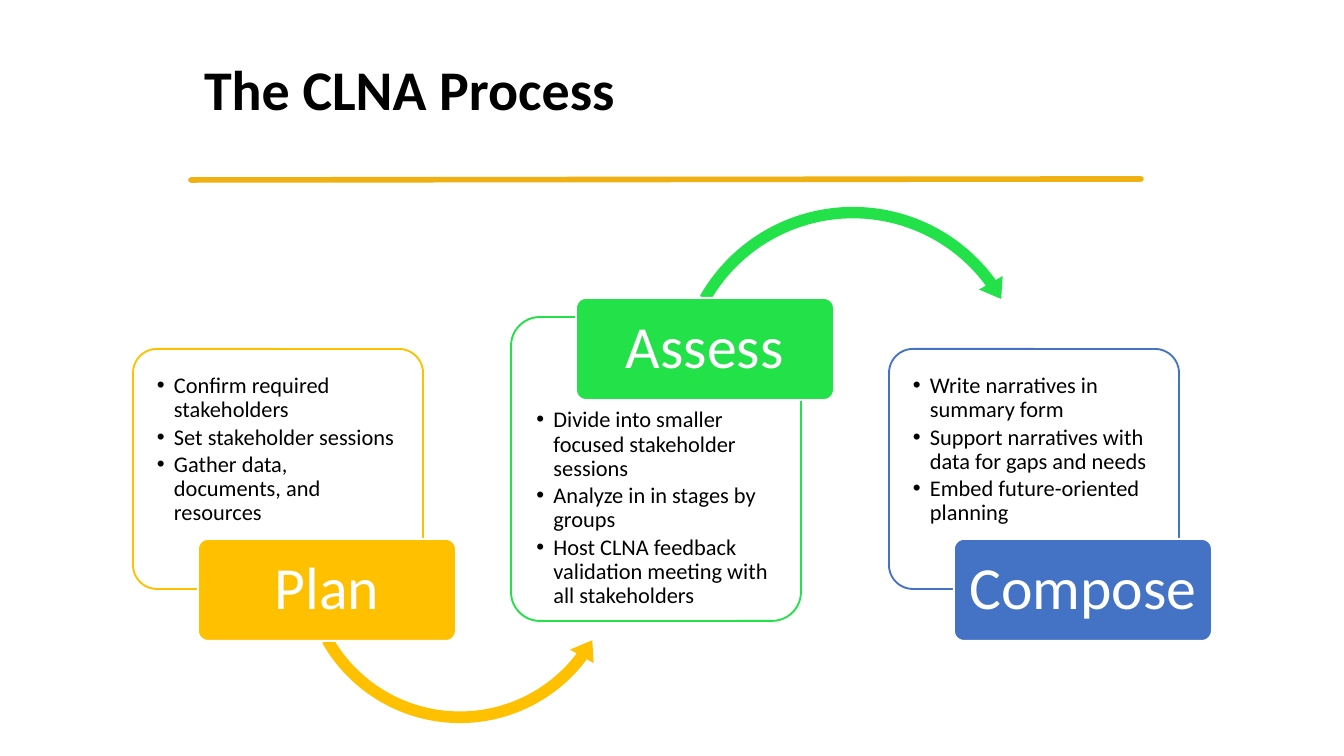
import dataclasses

import pptx
import pptx.dml.color
import pptx.enum.shapes
import pptx.enum.text
import pptx.oxml.ns
import pptx.util
from lxml import etree

PX = 914400 / 134.4
SHAPES = pptx.enum.shapes.MSO_SHAPE
ALIGN = pptx.enum.text.PP_ALIGN
ANCHOR = pptx.enum.text.MSO_ANCHOR
qn = pptx.oxml.ns.qn


@dataclasses.dataclass(frozen=True)
class Theme:
    font: str = "Calibri"
    black: str = "000000"
    white: str = "FFFFFF"
    rule: str = "EEB111"
    plan: str = "FFC000"
    assess: str = "23E148"
    compose: str = "4472C4"
    title_size: int = 30
    banner_size: int = 32
    list_size: int = 12


theme = Theme()


def add_filled_shape(kind, box, adjustments, fill, line=None):
    shape = slide.shapes.add_shape(kind, *[round(n * PX) for n in box])
    shape.shadow.inherit = False
    for index, value in enumerate(adjustments):
        shape.adjustments[index] = value
    shape.fill.solid()
    shape.fill.fore_color.rgb = pptx.dml.color.RGBColor.from_string(fill)
    if line:
        shape.line.color.rgb = pptx.dml.color.RGBColor.from_string(line)
        shape.line.width = pptx.util.Pt(1)
    else:
        shape.line.fill.background()
    return shape


def format_text(shape, size, color, align, anchor, insets, bold=False):
    """Format every paragraph; insets are left, top, right, bottom in px."""
    frame = shape.text_frame
    frame.word_wrap = True
    frame.vertical_anchor = anchor
    left, top, right, bottom = [round(n * PX) for n in insets]
    frame.margin_left, frame.margin_top = left, top
    frame.margin_right, frame.margin_bottom = right, bottom
    for paragraph in frame.paragraphs:
        paragraph.alignment = align
        paragraph.line_spacing = 0.9
        for run in paragraph.runs:
            run.font.name = theme.font
            run.font.size = pptx.util.Pt(size)
            run.font.bold = bold
            run.font.color.rgb = pptx.dml.color.RGBColor.from_string(color)


presentation = pptx.Presentation()
presentation.slide_width = round(1344 * PX)
presentation.slide_height = round(756 * PX)
slide = presentation.slides.add_slide(presentation.slide_layouts.get_by_name("Title Only"))

# Title and rule
title = slide.shapes.title
title.left, title.top = round(191 * PX), round(19 * PX)
title.width, title.height = round(1082 * PX), round(146 * PX)
title.text_frame.text = "The CLNA Process"
format_text(title, theme.title_size, theme.black, ALIGN.LEFT, ANCHOR.MIDDLE,
            (13, 7, 13, 7), bold=True)

rule = slide.shapes.add_connector(
    pptx.enum.shapes.MSO_CONNECTOR.STRAIGHT,
    *[round(n * PX) for n in (191, 180, 1141, 179)])
rule.line.color.rgb = pptx.dml.color.RGBColor.from_string(theme.rule)
rule.line.width = pptx.util.Pt(3)
rule.line._get_or_add_ln().set("cap", "rnd")
etree.SubElement(rule._element.spPr, qn("a:effectLst"))

# Stages: name, colour, card top and height, text inset, banner top, bullets, arrow
CARD_LEFT, CARD_WIDTH, STAGE_STEP = 133, 290, 378
BANNER_OFFSET, BANNER_WIDTH, BANNER_HEIGHT = 65, 258, 102
BULLET_INDENT = round(17 * PX)
CORNER = [0.1]

stages = [
    ("Plan", theme.plan, 349, 240, 18, 539,
     ["Confirm required stakeholders",
      "Set stakeholder sessions",
      "Gather data, documents, and resources"],
     (SHAPES.LEFT_CIRCULAR_ARROW, (294, 399, 332, 332),
      (0.035, 4.339, 22.124, 90.274, 0.041))),
    ("Assess", theme.assess, 317, 304, 83, 298,
     ["Divide into smaller focused stakeholder sessions",
      "Analyze in in stages by groups",
      "Host CLNA feedback validation meeting with all stakeholders"],
     (SHAPES.CIRCULAR_ARROW, (669, 199, 368, 368),
      (0.031, 3.87, 194.401, 125.781, 0.037))),
    ("Compose", theme.compose, 349, 240, 18, 539,
     ["Write narratives in summary form",
      "Support narratives with data for gaps and needs",
      "Embed future-oriented planning"],
     None),
]

for index, stage in enumerate(stages):
    name, color, card_top, card_height, text_inset, banner_top, bullets, arrow = stage
    left = CARD_LEFT + index * STAGE_STEP

    card = add_filled_shape(SHAPES.ROUNDED_RECTANGLE,
                            (left, card_top, CARD_WIDTH, card_height),
                            CORNER, theme.white, color)
    card.text_frame.text = "\n".join(bullets)
    for paragraph in card.text_frame.paragraphs:
        properties = paragraph._p.get_or_add_pPr()
        properties.set("marL", str(BULLET_INDENT))
        properties.set("indent", str(-BULLET_INDENT))
        etree.SubElement(properties, qn("a:buFont"), typeface="Arial")
        etree.SubElement(properties, qn("a:buChar"), char="•")
        paragraph.space_after = pptx.util.Pt(1.8)
    format_text(card, theme.list_size, theme.black, ALIGN.LEFT, ANCHOR.TOP,
                (17, text_inset, 17, 0))

    if arrow:
        kind, box, adjustments = arrow
        add_filled_shape(kind, box, adjustments, color)

    banner = add_filled_shape(SHAPES.ROUNDED_RECTANGLE,
                              (left + BANNER_OFFSET, banner_top, BANNER_WIDTH, BANNER_HEIGHT),
                              CORNER, color, theme.white)
    banner.text_frame.text = name
    format_text(banner, theme.banner_size, theme.white, ALIGN.CENTER, ANCHOR.MIDDLE,
                (5, 5, 5, 5))

presentation.save("out.pptx")
